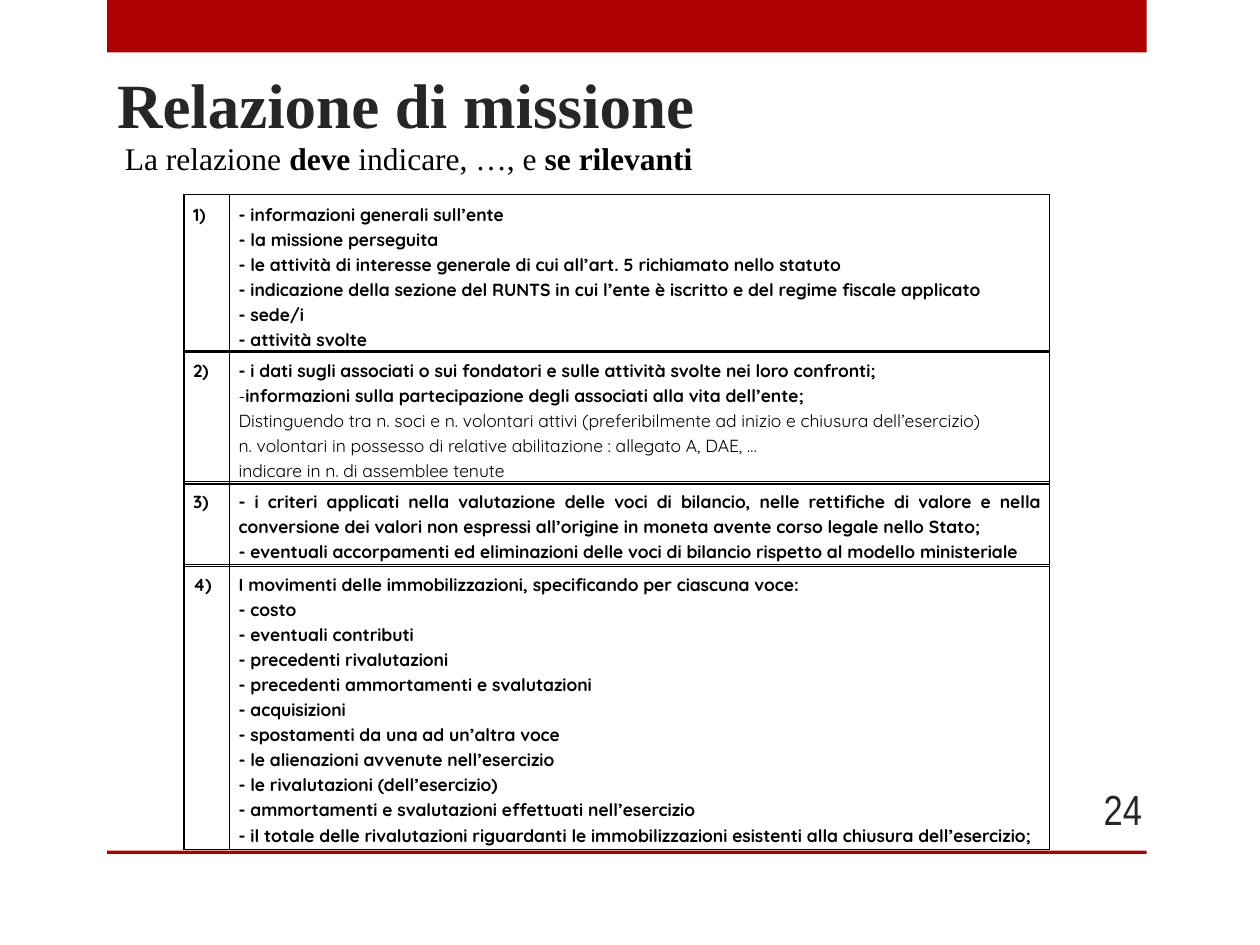
from dataclasses import dataclass

from lxml.etree import SubElement
from pptx import Presentation
from pptx.dml.color import RGBColor as RGB
from pptx.enum.shapes import MSO_SHAPE as SHAPE
from pptx.enum.text import MSO_ANCHOR as ANCHOR, PP_ALIGN as ALIGN
from pptx.oxml.ns import qn
from pptx.util import Pt


@dataclass(frozen=True)
class Theme:
    red: RGB = RGB.from_string("AD0101")
    grey: RGB = RGB.from_string("262626")
    black: RGB = RGB.from_string("000000")
    serif: str = "Times New Roman"
    sans: str = "Quicksand"
    narrow: str = "Arial Narrow"
    title: float = 36
    lead: float = 18
    number: float = 24
    body: float = 10
    border: float = 0.96


T = Theme()
LEFT, COLS = 105.2, (26, 468.6)
DASH = "\t"  # marks a line whose dash is a real bullet

# top, height, label, lines; a line is bold unless given as (text, False)
POINTS = [
    (111.2, 88.6, "1)", [
        "- informazioni generali sull’ente",
        "- la missione perseguita",
        "- le attività di interesse generale di cui all’art. 5 richiamato nello statuto",
        "- indicazione della sezione del RUNTS in cui l’ente è iscritto e del regime fiscale applicato",
        "- sede/i",
        "- attività svolte",
    ]),
    (200.2, 74.9, "2)", [
        "- i dati sugli associati o sui fondatori e sulle attività svolte nei loro confronti;",
        DASH + "informazioni sulla partecipazione degli associati alla vita dell’ente;",
        ("Distinguendo tra n. soci e n. volontari attivi (preferibilmente ad inizio e chiusura dell’esercizio)", False),
        ("n. volontari in possesso di relative abilitazione : allegato A, DAE, …", False),
        ("indicare in n. di assemblee tenute", False),
    ]),
    (275.2, 47.4, "3)", [
        "- i criteri applicati nella valutazione delle voci di bilancio, nelle rettifiche di valore e nella "
        "conversione dei valori non espressi all’origine in moneta avente corso legale nello Stato;",
        "- eventuali accorpamenti ed eliminazioni delle voci di bilancio rispetto al modello ministeriale",
    ]),
    (322.6, 162.7, "4)", [
        "I movimenti delle immobilizzazioni, specificando per ciascuna voce:",
        "- costo",
        "- eventuali contributi",
        "- precedenti rivalutazioni",
        "- precedenti ammortamenti e svalutazioni",
        "- acquisizioni",
        "- spostamenti da una ad un’altra voce",
        "- le alienazioni avvenute nell’esercizio",
        "- le rivalutazioni (dell’esercizio)",
        "- ammortamenti e svalutazioni effettuati nell’esercizio",
        "- il totale delle rivalutazioni riguardanti le immobilizzazioni esistenti alla chiusura dell’esercizio;",
    ]),
]


def style(item, **values):
    """Set each named attribute on the item."""
    for name, value in values.items():
        setattr(item, name, value)


def add_run(para, text, size, face, color, bold):
    run = para.add_run()
    run.text = text
    style(run.font, size=Pt(size), name=face, bold=bold)
    run.font.color.rgb = color


def add_bar(slide, top, height):
    bar = slide.shapes.add_shape(SHAPE.RECTANGLE, Pt(61.2), Pt(top), Pt(594), Pt(height))
    bar.shadow.inherit = False
    bar.fill.solid()
    bar.fill.fore_color.rgb = T.red
    bar.line.fill.background()


def add_text(slide, box, runs, size, face, color, anchor=ANCHOR.TOP, align=ALIGN.LEFT):
    frame = slide.shapes.add_textbox(*map(Pt, box)).text_frame
    style(frame, word_wrap=True, vertical_anchor=anchor)
    para = frame.paragraphs[0]
    para.alignment = align
    for text, bold in runs:
        add_run(para, text, size, face, color, bold)


def add_dash(para):
    props = para._p.get_or_add_pPr()
    props.set("marL", "0")
    props.set("indent", str(-Pt(13.5)))
    color = SubElement(props, qn("a:buClr"))
    SubElement(color, qn("a:srgbClr"), val=str(T.black))
    SubElement(props, qn("a:buFont"), typeface=T.sans)
    SubElement(props, qn("a:buChar"), char="-")


def add_edges(cell):
    props = cell._tc.get_or_add_tcPr()
    for i, side in enumerate(("lnL", "lnR", "lnT", "lnB")):
        line = props.makeelement(qn(f"a:{side}"), {"w": str(Pt(T.border))})
        fill = SubElement(line, qn("a:solidFill"))
        SubElement(fill, qn("a:srgbClr"), val=str(T.black))
        props.insert(i, line)


def fill_cell(cell, lines):
    style(cell, margin_left=Pt(5.2), margin_right=Pt(5.2),
          margin_top=Pt(3.6), margin_bottom=Pt(3.6))
    cell.fill.background()
    add_edges(cell)
    frame = cell.text_frame
    for i, line in enumerate(lines):
        text, bold = (line, True) if isinstance(line, str) else line
        para = frame.add_paragraph() if i else frame.paragraphs[0]
        style(para, alignment=ALIGN.JUSTIFY, line_spacing=1.15)
        if text.startswith(DASH):
            add_dash(para)
        add_run(para, text.lstrip(DASH), T.body, T.sans, T.black, bold)


def add_point(slide, top, height, label, lines):
    """Add one numbered point as a table of one row."""
    box = LEFT, top, sum(COLS), height
    table = slide.shapes.add_table(1, 2, *map(Pt, box)).table
    style(table, first_row=False, horz_banding=False)
    for col, width in zip(table.columns, COLS):
        col.width = Pt(width)
    fill_cell(table.cell(0, 0), [label])
    fill_cell(table.cell(0, 1), lines)


def main():
    deck = Presentation()
    style(deck, slide_width=Pt(720), slide_height=Pt(540))
    slide = deck.slides.add_slide(deck.slide_layouts[6])
    add_bar(slide, 0, 30)
    add_bar(slide, 486, 2)
    add_text(slide, (59.8, -41.8, 534, 126), [("Relazione di missione", True)],
             T.title, T.serif, T.grey, ANCHOR.BOTTOM)
    lead = [(" La relazione ", False), ("deve", True),
            (" indicare, …, e ", False), ("se rilevanti", True)]
    add_text(slide, (59.8, 75.6, 385, 29), lead, T.lead, T.serif, T.black)
    for point in POINTS:
        add_point(slide, *point)
    add_text(slide, (600, 448, 59.6, 28.8), [("24", False)],
             T.number, T.narrow, T.grey, ANCHOR.MIDDLE, ALIGN.RIGHT)
    deck.save("out.pptx")


if __name__ == "__main__":
    main()
